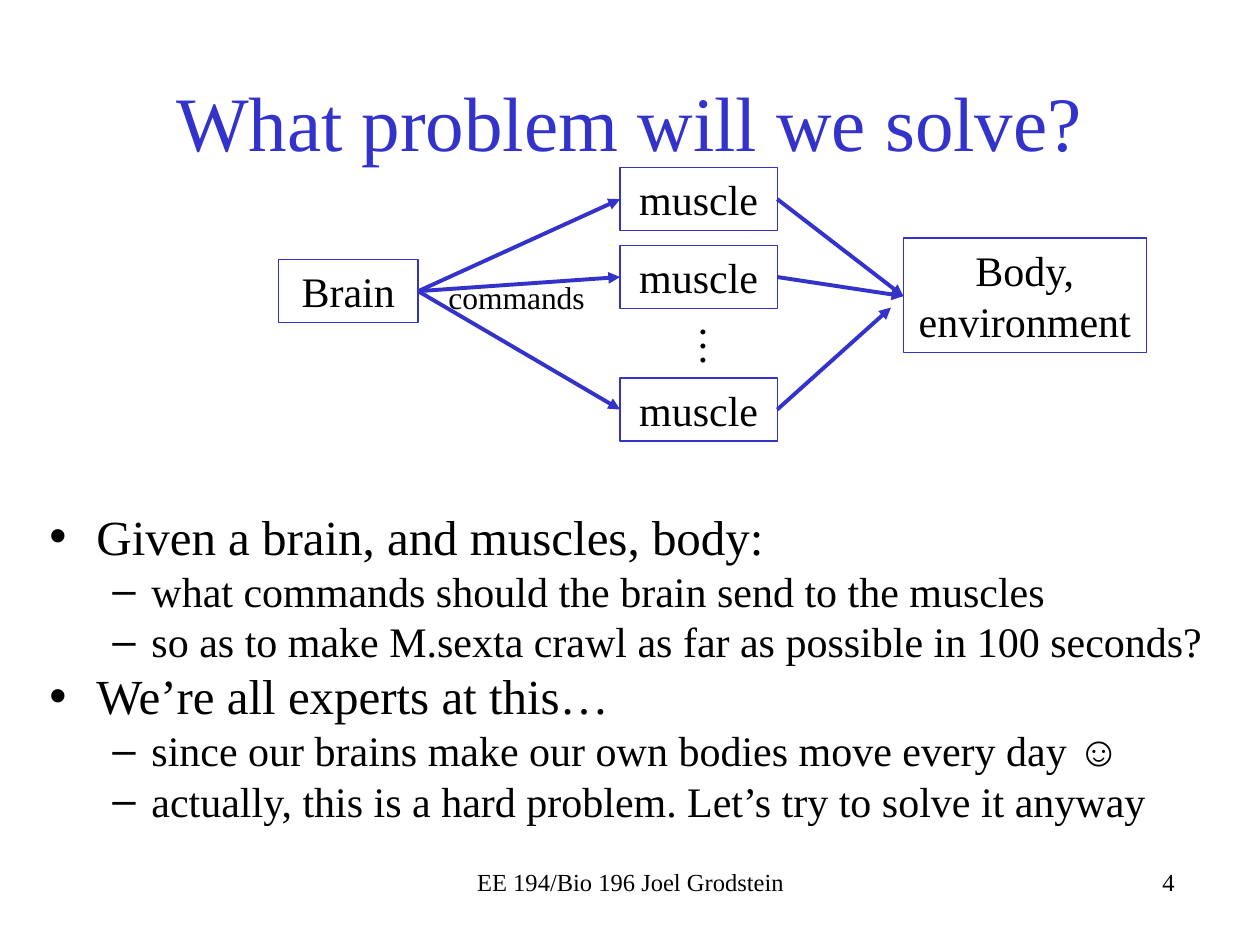
import pptx
import pptx.dml.color
import pptx.enum.shapes
import pptx.enum.text
import pptx.oxml.ns
import pptx.util
from lxml import etree

Cm, Pt = pptx.util.Cm, pptx.util.Pt
ALIGN = pptx.enum.text.PP_ALIGN
ANCHOR = pptx.enum.text.MSO_ANCHOR
BLUE, BLACK = "3333CC", "000000"

MUSCLE_LEFT, MUSCLE_WIDTH, BOX_HEIGHT = 12.5, 3.17, 1.27
MUSCLE_TOPS = (3.38, 4.95, 7.62)
BRAIN_EXIT = (8.43, 5.87)
BODY_ENTRIES = ((18.21, 5.97), (18.21, 5.97), (17.96, 6.2))

# Level and text of each bullet
BULLETS = (
    (0, "Given a brain, and muscles, body:"),
    (1, "what commands should the brain send to the muscles"),
    (1, "so as to make M.sexta crawl as far as possible in 100 seconds?"),
    (0, "We’re all experts at this…"),
    (1, "since our brains make our own bodies move every day ☺"),
    (1, "actually, this is a hard problem. Let’s try to solve it anyway"),
)
# Size in points, left margin and hanging indent in cm for each level
LEVELS = ((28, 0.95, -0.95), (24, 2.06, -0.79))


def color(hex_string):
    return pptx.dml.color.RGBColor.from_string(hex_string)


def place(shape, left, top, width, height):
    shape.left, shape.top = Cm(left), Cm(top)
    shape.width, shape.height = Cm(width), Cm(height)


def format_paragraph(paragraph, size, font_color=BLACK, alignment=None):
    paragraph.font.name = "Times New Roman"
    paragraph.font.size = Pt(size)
    paragraph.font.color.rgb = color(font_color)
    paragraph.alignment = alignment


def fill_title(title, text):
    place(title, 1.9, 0.84, 21.59, 3.18)
    title.text_frame.text = text
    title.text_frame.vertical_anchor = ANCHOR.MIDDLE
    format_paragraph(title.text_frame.paragraphs[0], 44, BLUE, ALIGN.CENTER)


def fill_bullets(body):
    place(body, 0.74, 10.08, 24.1, 7.01)
    frame = body.text_frame
    frame.auto_size = pptx.enum.text.MSO_AUTO_SIZE.NONE
    frame.text = "\n".join(text for _, text in BULLETS)
    for paragraph, (level, _) in zip(frame.paragraphs, BULLETS):
        size, margin, indent = LEVELS[level]
        paragraph.level = level
        paragraph.space_before = Pt(0)
        format_paragraph(paragraph, size)
        properties = paragraph._p.get_or_add_pPr()
        properties.set("marL", str(Cm(margin)))
        properties.set("indent", str(Cm(indent)))
    frame.paragraphs[0].space_before = Pt(5.6)


def add_label(slide, text, bounds, size, alignment=ALIGN.LEFT):
    label = slide.shapes.add_textbox(*map(Cm, bounds))
    label.text_frame.word_wrap = True
    label.text_frame.text = text
    format_paragraph(label.text_frame.paragraphs[0], size, alignment=alignment)
    return label


def add_box(slide, text, *bounds):
    box = slide.shapes.add_shape(
        pptx.enum.shapes.MSO_SHAPE.RECTANGLE, *map(Cm, bounds))
    box.shadow.inherit = False
    box.fill.background()
    box.line.color.rgb = color(BLUE)
    box.line.width = Pt(0.75)
    box.text_frame.word_wrap = True
    box.text_frame.text = text
    box.text_frame.vertical_anchor = ANCHOR.MIDDLE
    format_paragraph(box.text_frame.paragraphs[0], 24, alignment=ALIGN.CENTER)


def add_arrow(slide, start, end):
    arrow = slide.shapes.add_connector(
        pptx.enum.shapes.MSO_CONNECTOR.STRAIGHT, *map(Cm, start + end))
    arrow.line.color.rgb = color(BLUE)
    arrow.line.width = Pt(2.25)
    qn = pptx.oxml.ns.qn
    etree.SubElement(arrow.line._get_or_add_ln(), qn("a:tailEnd"), type="triangle")
    etree.SubElement(arrow._element.spPr, qn("a:effectLst"))


def add_diagram(slide):
    # Boxes
    add_box(slide, "Brain", 5.61, 5.23, 2.82, BOX_HEIGHT)
    add_box(slide, "Body, environment", 18.21, 4.8, 4.9, 2.31)
    # Each muscle with its incoming and outgoing arrows
    for top, body_entry in zip(MUSCLE_TOPS, BODY_ENTRIES):
        add_box(slide, "muscle", MUSCLE_LEFT, top, MUSCLE_WIDTH, BOX_HEIGHT)
        middle = top + BOX_HEIGHT / 2
        add_arrow(slide, BRAIN_EXIT, (MUSCLE_LEFT, middle))
        add_arrow(slide, (MUSCLE_LEFT + MUSCLE_WIDTH, middle), body_entry)
    # Labels
    add_label(slide, "…", (13.82, 6.32, 1.3, 1.27), 24).rotation = 90
    add_label(slide, "commands", (8.79, 5.49, 3.71, 1.02), 18)


def main():
    presentation = pptx.Presentation()
    presentation.slide_width, presentation.slide_height = Cm(25.4), Cm(19.05)
    slide = presentation.slides.add_slide(presentation.slide_layouts[1])
    fill_title(slide.shapes.title, "What problem will we solve?")
    fill_bullets(slide.placeholders[1])
    add_diagram(slide)
    # Footer and slide number
    add_label(slide, "EE 194/Bio 196 Joel Grodstein",
              (8.69, 17.35, 8.05, 1.27), 14, ALIGN.CENTER)
    add_label(slide, "4", (15.88, 17.35, 8.05, 1.27), 14, ALIGN.RIGHT)
    presentation.save("out.pptx")


if __name__ == "__main__":
    main()
